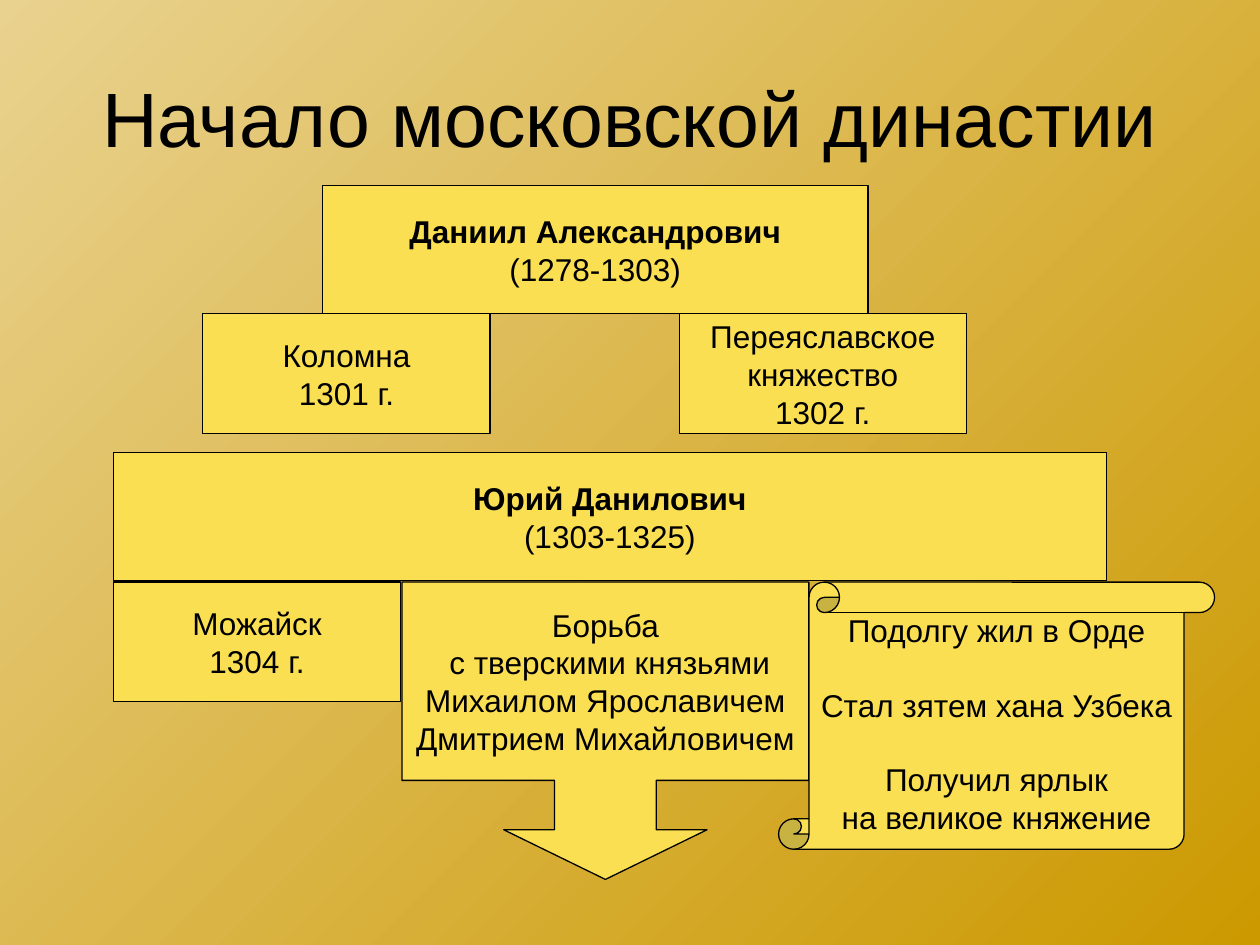
from pptx import Presentation
from pptx.dml.color import RGBColor
from pptx.enum import shapes, text
from pptx.util import Inches, Pt

BLACK = RGBColor(0x00, 0x00, 0x00)
YELLOW = RGBColor(0xFB, 0xDF, 0x53)
LIGHT_GOLD = RGBColor(0xE9, 0xD2, 0x8F)
DARK_GOLD = RGBColor(0xCC, 0x99, 0x00)
FONT = "Arial"
BODY_SIZE = Pt(18)
LINE_GAP = Pt(21)

RULER_HEIGHT = 1.02
LAND_WIDTH, LAND_HEIGHT = 2.28, 0.95


def set_all(target, values):
    for name, value in values.items():
        setattr(target, name, value)


def write_lines(shape, lines, size, wrap, bold_first=False, gaps_before=()):
    """Fill a shape with centred lines; gaps_before lists lines set off by a gap."""
    frame = shape.text_frame
    set_all(frame, {"word_wrap": wrap, "vertical_anchor": text.MSO_ANCHOR.MIDDLE})
    for index, line in enumerate(lines):
        paragraph = frame.paragraphs[0] if index == 0 else frame.add_paragraph()
        paragraph.alignment = text.PP_ALIGN.CENTER
        if index in gaps_before:
            paragraph.space_before = LINE_GAP
        run = paragraph.add_run()
        run.text = line
        set_all(run.font, {"name": FONT, "size": size,
                           "bold": bold_first and index == 0})
        run.font.color.rgb = BLACK


def paint_background(slide):
    fill = slide.background.fill
    fill.gradient()
    fill.gradient_angle = 315
    for stop, color, position in zip(fill.gradient_stops,
                                     (LIGHT_GOLD, DARK_GOLD), (0, 1)):
        stop.color.rgb = color
        stop.position = position


def add_title(slide, left, top, width, height, title):
    box = slide.shapes.add_textbox(*map(Inches, (left, top, width, height)))
    write_lines(box, [title], Pt(44), wrap=True)


def add_block(slide, box, lines, kind=shapes.MSO_SHAPE.RECTANGLE,
              adjustments=(), **line_options):
    shape = slide.shapes.add_shape(kind, *map(Inches, box))
    for index, value in enumerate(adjustments):
        shape.adjustments[index] = value
    shape.shadow.inherit = False
    shape.fill.solid()
    shape.fill.fore_color.rgb = YELLOW
    shape.line.color.rgb = BLACK
    shape.line.width = Pt(0.75)
    write_lines(shape, lines, BODY_SIZE, wrap=False, **line_options)


def add_daniil_reign(slide, left, top, width):
    """Ruler on top, with two lands centred under the ends of his box."""
    add_block(slide, (left + 0.95, top, width - 1.73, RULER_HEIGHT),
              ["Даниил Александрович", "(1278-1303)"], bold_first=True)
    lands_top = top + RULER_HEIGHT
    add_block(slide, (left, lands_top, LAND_WIDTH, LAND_HEIGHT),
              ["Коломна", "1301 г."])
    add_block(slide, (left + width - LAND_WIDTH, lands_top, LAND_WIDTH, LAND_HEIGHT),
              ["Переяславское", "княжество", "1302 г."])


def add_yuri_reign(slide, left, top, width):
    """Ruler on top, with a land, a struggle and a scroll of deeds below."""
    add_block(slide, (left, top, width, RULER_HEIGHT),
              ["Юрий Данилович", "(1303-1325)"], bold_first=True)
    row_top = top + RULER_HEIGHT + 0.01
    struggle_left = left + LAND_WIDTH + 0.01
    add_block(slide, (struggle_left, row_top, 3.23, 2.36),
              ["Борьба", " с тверскими князьями",
               "Михаилом Ярославичем", "Дмитрием Михайловичем"],
              shapes.MSO_SHAPE.DOWN_ARROW_CALLOUT, (0.342, 0.342, 0.167, 0.667))
    add_block(slide, (left, row_top, LAND_WIDTH, LAND_HEIGHT),
              ["Можайск", "1304 г."])
    add_block(slide, (left + 5.28, row_top, 3.46, 2.12),
              ["Подолгу жил в Орде", "Стал зятем хана Узбека",
               "Получил ярлык", "на великое княжение"],
              shapes.MSO_SHAPE.VERTICAL_SCROLL, (0.114,), gaps_before=(1, 2))


def main():
    presentation = Presentation()
    set_all(presentation, {"slide_width": Inches(10), "slide_height": Inches(7.5)})
    slide = presentation.slides.add_slide(presentation.slide_layouts[6])
    paint_background(slide)
    add_title(slide, 0.5, 0.3, 9, 1.25, "Начало московской династии")
    add_daniil_reign(slide, 1.61, 1.47, 6.06)
    add_yuri_reign(slide, 0.9, 3.59, 7.88)
    presentation.save("out.pptx")


if __name__ == "__main__":
    main()
